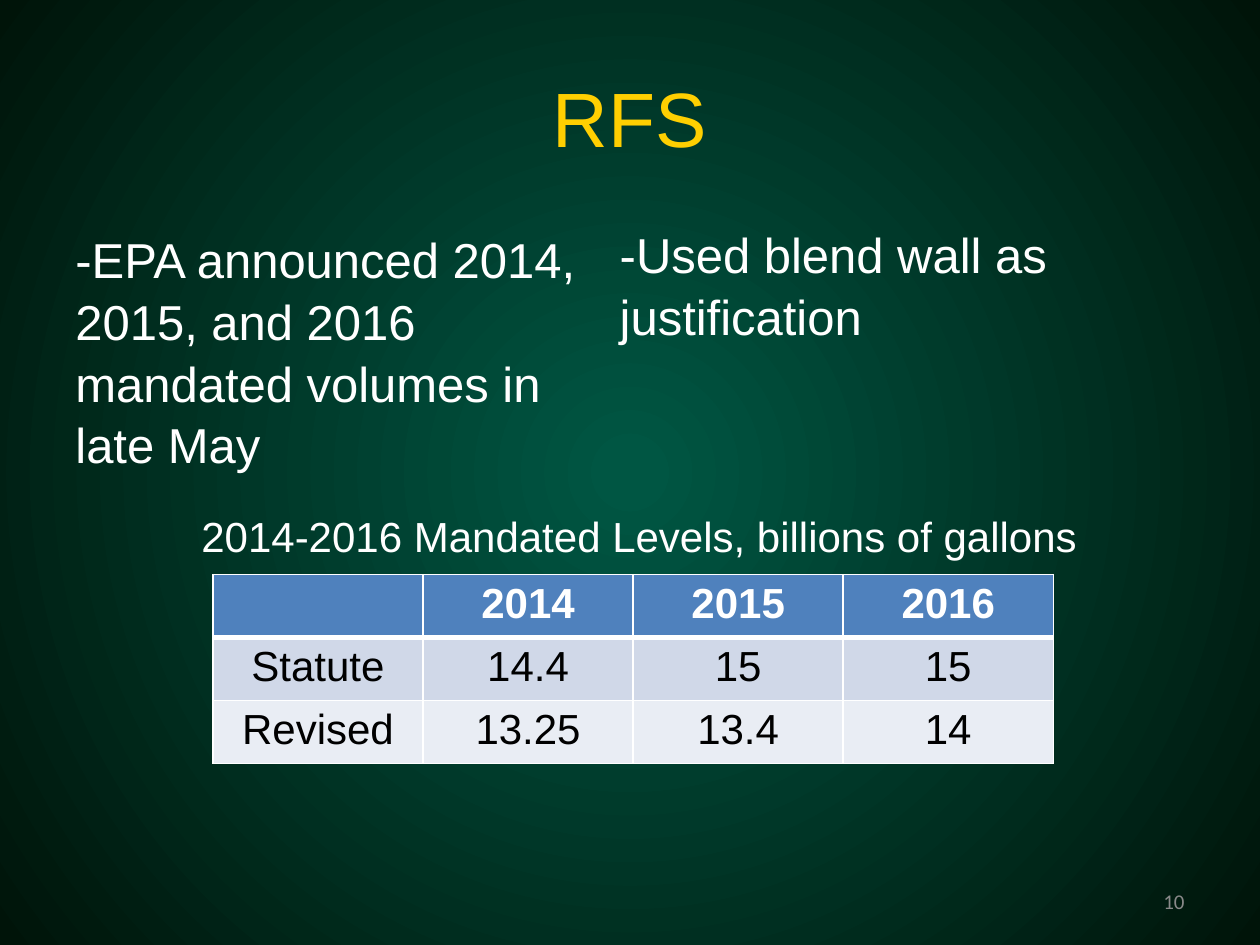
from dataclasses import dataclass

from lxml.etree import SubElement
from pptx import Presentation
from pptx.dml.color import RGBColor as RGB
from pptx.enum.text import MSO_ANCHOR as Anchor, PP_ALIGN as Align
from pptx.oxml.ns import qn
from pptx.util import Inches, Pt


@dataclass(frozen=True)
class Theme:
    glow: str = "005643"
    edge: str = "001409"
    gold: str = "FFCF01"
    white: str = "FFFFFF"
    black: str = "000000"
    grey: str = "898989"
    header: str = "4F81BD"
    bands: tuple = ("D0D8E8", "E9EDF4")
    font: str = "Arial"
    number_font: str = "Calibri"
    title_size: int = 44
    body_size: int = 28
    table_size: int = 24
    number_size: int = 12


T = Theme()
BODY = dict(name=T.font, size=T.body_size, color=T.white)
CAPTION = dict(BODY, size=T.table_size)
TITLE = dict(BODY, size=T.title_size, color=T.gold)
NUMBER = dict(name=T.number_font, size=T.number_size, color=T.grey)

LEVELS = [
    ["", "2014", "2015", "2016"],
    ["Statute", "14.4", "15", "15"],
    ["Revised", "13.25", "13.4", "14"],
]


def write(tf, text, style, align=Align.LEFT, anchor=Anchor.TOP, spacing=None):
    """Fill a text frame with one styled paragraph."""
    tf.word_wrap = True
    tf.vertical_anchor = anchor
    p = tf.paragraphs[0]
    p.alignment, p.line_spacing = align, spacing
    r = p.add_run()
    r.text = text
    for key, value in style.items():
        if key == "color":
            r.font.color.rgb = RGB.from_string(value)
        else:
            setattr(r.font, key, Pt(value) if key == "size" else value)


def paint_background(s):
    fill = s.background.fill
    fill.gradient()
    for stop, pos, color in zip(fill.gradient_stops, (0.02, 1), (T.glow, T.edge)):
        stop.position = pos
        stop.color.rgb = RGB.from_string(color)
    grad = s.background._cSld.find(".//" + qn("a:gradFill"))
    grad.remove(grad.find(qn("a:lin")))
    circle = SubElement(grad, qn("a:path"), {"path": "circle"})
    SubElement(circle, qn("a:fillToRect"), dict.fromkeys("ltrb", "50000"))


def add_title(s, box, text):
    sp = s.shapes.title
    sp.left, sp.top, sp.width, sp.height = map(Inches, box)
    write(sp.text_frame, text, TITLE, Align.CENTER, Anchor.MIDDLE)


def add_text(s, box, text, style, **layout):
    sp = s.shapes.add_textbox(*map(Inches, box))
    write(sp.text_frame, text, style, **layout)


def set_borders(cell, bottom):
    """Draw white cell borders, 1 pt wide except for the given bottom width."""
    tcPr = cell._tc.get_or_add_tcPr()
    for side, width in dict(L=1, R=1, T=1, B=bottom).items():
        ln = SubElement(tcPr, qn("a:ln" + side), {"w": str(Pt(width))})
        SubElement(SubElement(ln, qn("a:solidFill")), qn("a:srgbClr"), {"val": T.white})


def add_levels_table(s, box, rows):
    table = s.shapes.add_table(len(rows), len(rows[0]), *map(Inches, box)).table
    for i, row in enumerate(rows):
        head = i == 0
        fill = T.header if head else T.bands[(i - 1) % 2]
        style = dict(CAPTION, color=T.white if head else T.black, bold=head)
        for j, text in enumerate(row):
            cell = table.cell(i, j)
            set_borders(cell, 3 if head else 1)
            cell.fill.solid()
            cell.fill.fore_color.rgb = RGB.from_string(fill)
            write(cell.text_frame, text, style, Align.CENTER)


def build_rfs_slide(prs):
    s = prs.slides.add_slide(prs.slide_layouts[5])
    paint_background(s)
    add_title(s, (0.5, 0.3, 9, 1.25), "RFS")
    add_text(s, (0.5, 1.75, 4.32, 3.6),
             "-EPA announced 2014, 2015, and 2016 mandated volumes in late May",
             BODY, spacing=1.05)
    add_text(s, (4.82, 1.71, 4.32, 3.6), "-Used blend wall as justification",
             BODY, spacing=1.05)
    add_text(s, (1.5, 3.98, 7.44, 0.5),
             "2014-2016 Mandated Levels, billions of gallons", CAPTION, spacing=1.05)
    add_levels_table(s, (1.69, 4.56, 6.67, 1.41), LEVELS)
    add_text(s, (7.17, 6.95, 2.33, 0.4), "10", NUMBER,
             align=Align.RIGHT, anchor=Anchor.MIDDLE)


def main():
    prs = Presentation()
    prs.slide_width, prs.slide_height = Inches(10), Inches(7.5)
    build_rfs_slide(prs)
    prs.save("out.pptx")


if __name__ == "__main__":
    main()
